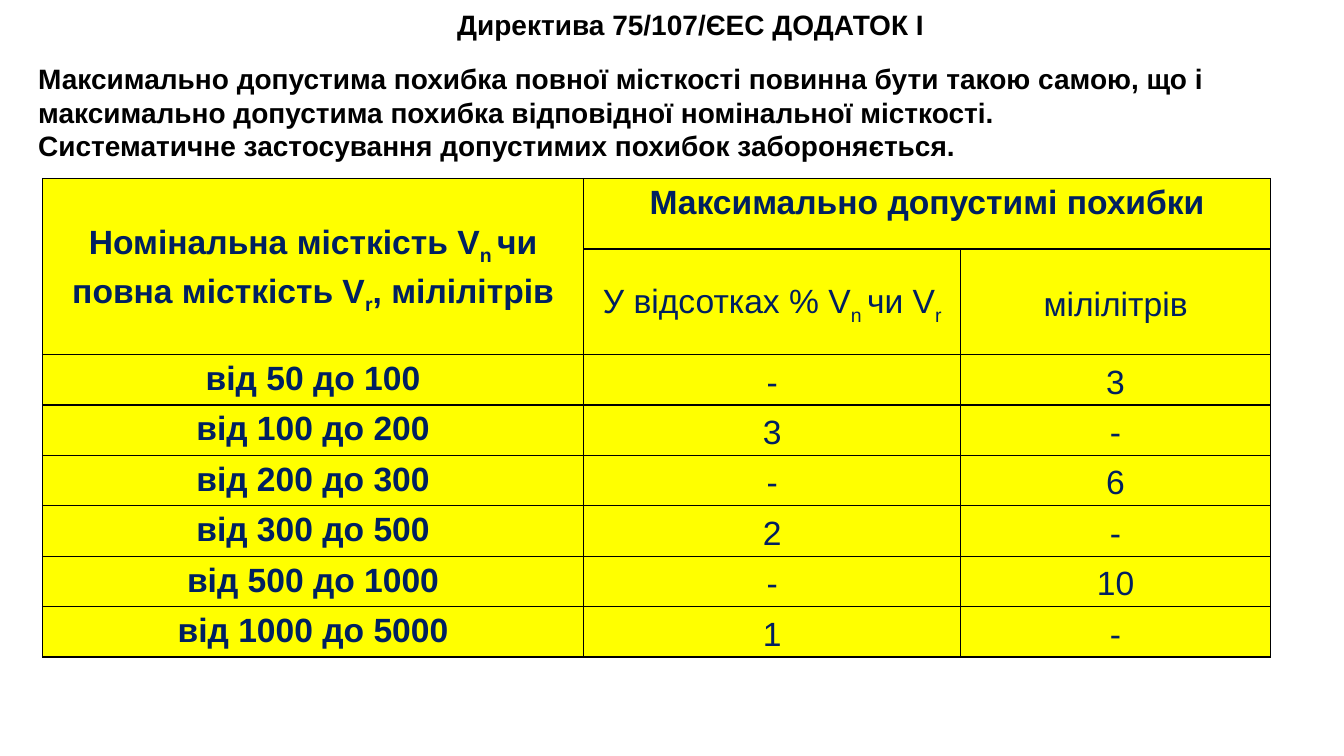
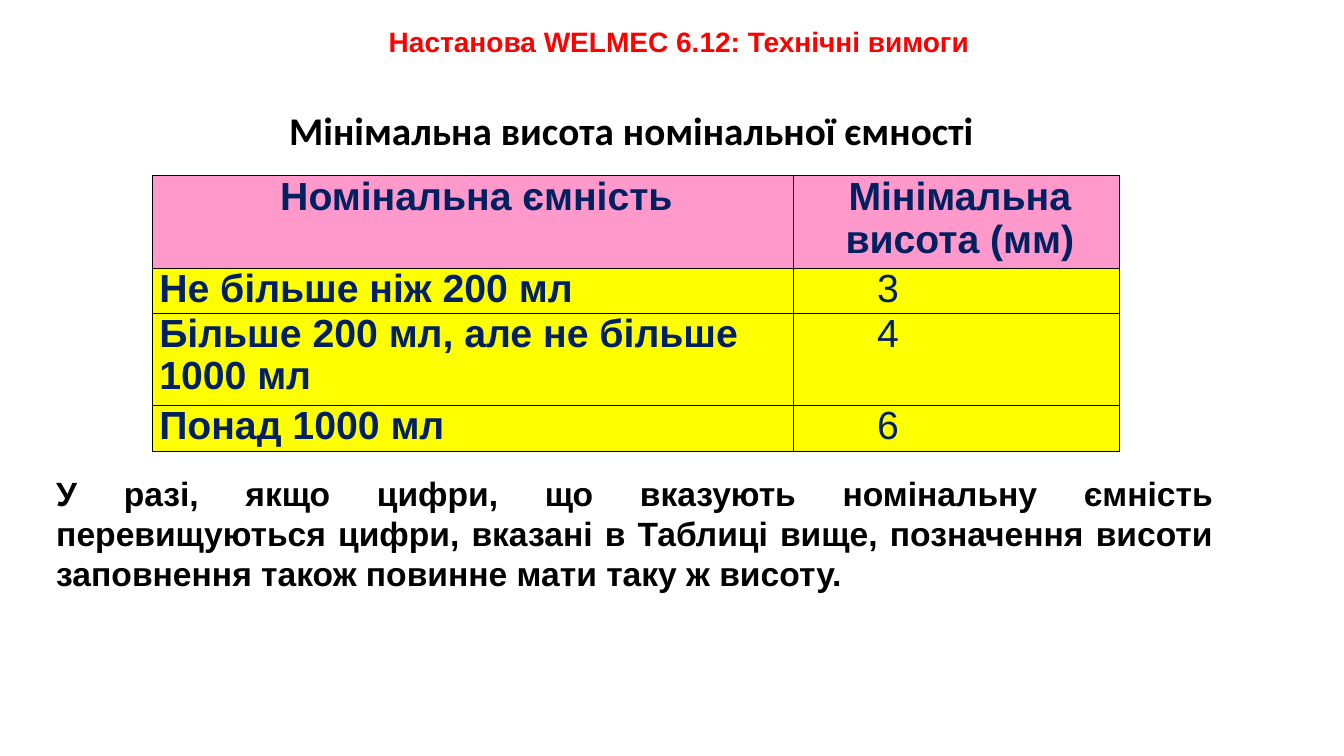
"""Two slides on permissible errors and minimum heights of nominal capacity."""
from lxml import etree
from pptx import Presentation, util as u
from pptx.dml.color import RGBColor
from pptx.enum import text
from pptx.oxml.ns import qn

BLACK = RGBColor(0, 0, 0)
RED = RGBColor(0xFF, 0, 0)
NAVY = RGBColor(0, 0x20, 0x60)
YELLOW = RGBColor(0xFF, 0xFF, 0)
PINK = RGBColor(0xFF, 0x99, 0xCC)
ALIGN = text.PP_ALIGN
ANCHOR = text.MSO_ANCHOR

DIRECTIVE_TITLE = "Директива 75/107/ЄEC ДОДАТОК I"
DIRECTIVE_RULES = [
    "Максимально допустима похибка повної місткості повинна бути такою самою, що і "
    "максимально допустима похибка відповідної номінальної місткості.",
    "Систематичне застосування допустимих похибок забороняється.",
]
ERROR_ROWS = [
    ("Номінальна місткість V_n _чи повна місткість V_r_, мілілітрів",
     "Максимально допустимі похибки", ""),
    ("", "У відсотках % V_n _чи V_r", "мілілітрів"),
    ("від 50 до 100", "-", "3"),
    ("від 100 до 200", "3", "-"),
    ("від 200 до 300", "-", "6"),
    ("від 300 до 500", "2", "-"),
    ("від 500 до 1000", "-", "10"),
    ("від 1000 до 5000", "1", "-"),
]
GUIDE_TITLE = "Настанова WELMEC 6.12: Технічні вимоги"
HEIGHT_HEADING = "Мінімальна висота номінальної ємності"
HEIGHT_ROWS = [
    ("Номінальна ємність", "Мінімальна висота (мм)"),
    ("Не більше ніж 200 мл", "3"),
    ("Більше 200 мл, але не більше 1000 мл", "4"),
    ("Понад 1000 мл", "6"),
]
HEIGHT_NOTE = ["У разі, якщо цифри, що вказують номінальну ємність перевищуються цифри, "
               "вказані в Таблиці вище, позначення висоти заповнення також повинне мати "
               "таку ж висоту."]


def style_run(run, size, color, bold=True, font="Arial"):
    run.font.size, run.font.bold, run.font.name = u.Pt(size), bold, font
    run.font.color.rgb = color


def write(frame, lines, size, color=BLACK, align=ALIGN.LEFT, font="Arial"):
    frame.text = "\n".join(lines)
    for paragraph in frame.paragraphs:
        paragraph.alignment = align
        for run in paragraph.runs:
            style_run(run, size, color, font=font)


def add_titled_slide(deck, title, box, color):
    slide = deck.slides.add_slide(deck.slide_layouts[5])
    heading = slide.shapes.title
    heading.left, heading.top, heading.width, heading.height = map(u.Inches, box)
    write(heading.text_frame, [title], 20, color, ALIGN.CENTER)
    heading.text_frame.vertical_anchor = ANCHOR.TOP
    heading.text_frame.auto_size = text.MSO_AUTO_SIZE.NONE
    return slide


def add_text(slide, box, lines, size, wrap=True, **style):
    frame = slide.shapes.add_textbox(*map(u.Inches, box)).text_frame
    frame.word_wrap = wrap
    write(frame, lines, size, **style)
    return frame


def add_borders(cell):
    properties = cell._tc.get_or_add_tcPr()
    for index, side in enumerate(("lnL", "lnR", "lnT", "lnB")):
        line = etree.Element(qn("a:" + side), w=str(u.Pt(1)))
        fill = etree.SubElement(line, qn("a:solidFill"))
        etree.SubElement(fill, qn("a:srgbClr"), val=str(BLACK))
        properties.insert(index, line)


def add_grid(slide, left, top, widths, heights, rows, size, side_margin, style_cell):
    frame = slide.shapes.add_table(len(rows), len(widths), u.Inches(left), u.Inches(top),
                                   u.Inches(sum(widths)), u.Inches(sum(heights)))
    grid = frame.table
    grid.first_row = grid.horz_banding = False
    for column, width in zip(grid.columns, widths):
        column.width = u.Inches(width)
    for r, (row, height) in enumerate(zip(rows, heights)):
        grid.rows[r].height = u.Inches(height)
        for c, words in enumerate(row):
            cell = grid.cell(r, c)
            cell.margin_left = cell.margin_right = u.Inches(side_margin)
            cell.margin_top = cell.margin_bottom = 0
            paragraph = cell.text_frame.paragraphs[0]
            fill, bold = style_cell(cell, paragraph, r, c)
            cell.fill.solid()
            cell.fill.fore_color.rgb = fill
            add_borders(cell)
            for part, piece in enumerate(words.split("_")):
                if piece:
                    run = paragraph.add_run()
                    run.text = piece
                    style_run(run, size, NAVY, bold)
                    if part % 2:
                        run.font._element.set("baseline", "-25000")
    return grid


def style_error_cell(cell, paragraph, r, c):
    top_anchored = (r == 0 and c > 0) or (r > 1 and c == 0)
    cell.vertical_anchor = ANCHOR.TOP if top_anchored else ANCHOR.MIDDLE
    paragraph.alignment = ALIGN.CENTER
    paragraph.line_spacing = 1.15
    paragraph.space_after = u.Pt(10)
    return YELLOW, r == 0 or c == 0


def style_height_cell(cell, paragraph, r, c):
    header = r == 0
    indent = 0.83 if c and not header else 0.07
    paragraph._p.get_or_add_pPr().set("marL", str(u.Inches(indent)))
    paragraph.alignment = ALIGN.CENTER if header else ALIGN.LEFT
    paragraph.line_spacing = 0.99 if header else 0.97
    return PINK if header else YELLOW, header or c == 0


def build_directive(deck):
    slide = add_titled_slide(deck, DIRECTIVE_TITLE, (3.98, 0.02, 5.74, 0.44), BLACK)
    add_text(slide, (0.28, 0.56, 12.41, 1.11), DIRECTIVE_RULES, 20)
    grid = add_grid(slide, 0.42, 1.77, (5.37, 3.74, 3.07), [0.7, 0.79] + [0.5] * 6,
                    ERROR_ROWS, 24, 0.07, style_error_cell)
    grid.cell(0, 0).merge(grid.cell(1, 0))
    grid.cell(0, 1).merge(grid.cell(0, 2))


def build_guide(deck):
    slide = add_titled_slide(deck, GUIDE_TITLE, (2.38, 0.19, 8.71, 0.44), RED)
    add_grid(slide, 1.51, 1.74, (6.36, 3.23), (0.92, 0.45, 0.91, 0.46),
             HEIGHT_ROWS, 28, 0, style_height_cell)
    heading = add_text(slide, (2.77, 1, 7.06, 0.57), [HEIGHT_HEADING], 28,
                       wrap=False, font="Calibri")
    heading.vertical_anchor = ANCHOR.MIDDLE
    add_text(slide, (0.46, 4.64, 11.67, 1.31), HEIGHT_NOTE, 24, align=ALIGN.JUSTIFY)


def main():
    deck = Presentation()
    deck.slide_width, deck.slide_height = u.Inches(13.33), u.Inches(7.5)
    build_directive(deck)
    build_guide(deck)
    deck.save("out.pptx")


if __name__ == "__main__":
    main()
